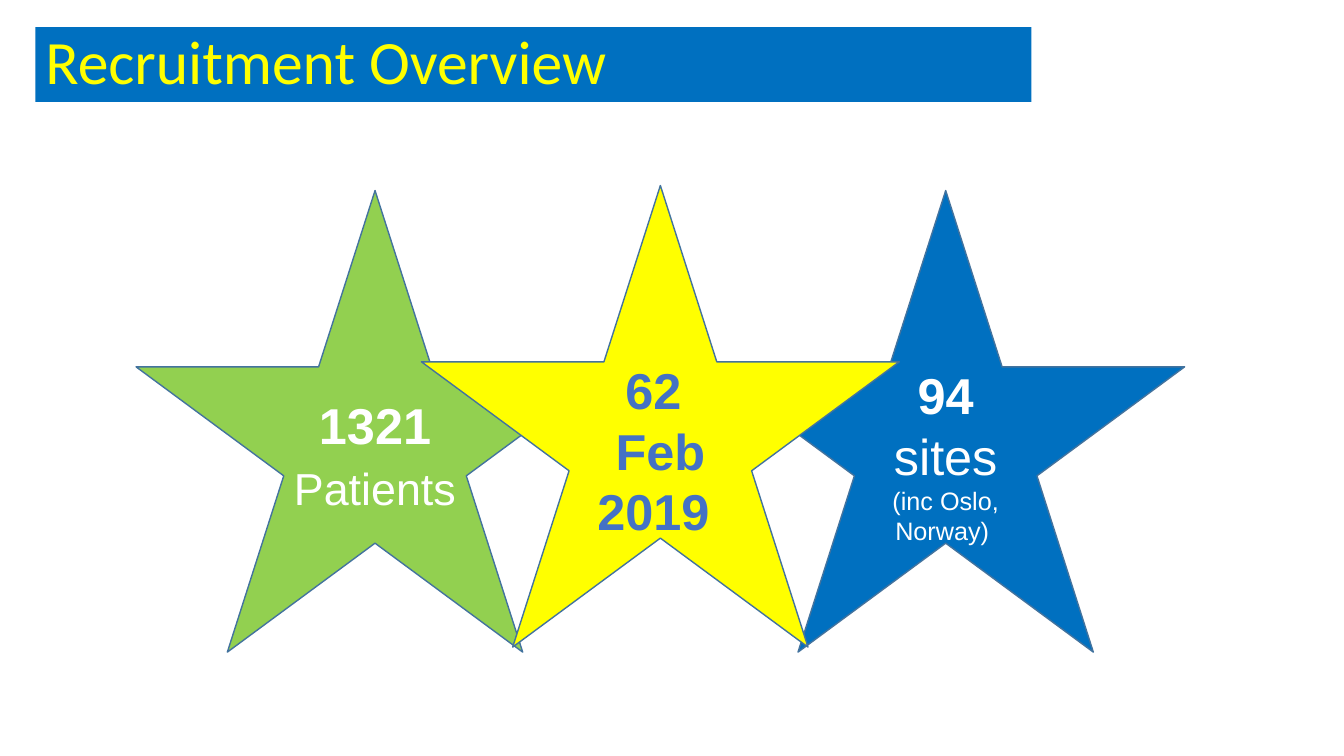
import pptx
import pptx.util
import pptx.dml.color
import pptx.enum.shapes
import pptx.enum.text

Inches, Pt = pptx.util.Inches, pptx.util.Pt
ALIGN = pptx.enum.text.PP_ALIGN
MIDDLE = pptx.enum.text.MSO_ANCHOR.MIDDLE
STAR = pptx.enum.shapes.MSO_SHAPE.STAR_5_POINT
BLUE, GREEN, YELLOW, WHITE = "0070C0", "92D050", "FFFF00", "FFFFFF"
INK, EDGE = "4472C4", "43739E"


def paint(target, color):
    """Give a fill solid colour."""
    target.solid()
    target.fore_color.rgb = pptx.dml.color.RGBColor.from_string(color)


def style(font, name, size, color, bold=False):
    font.name, font.size, font.bold = name, Pt(size), bold
    paint(font.fill, color)


def add_title(slide, text):
    title = slide.shapes.title
    title.left, title.top = Inches(0.35), Inches(0.27)
    title.width, title.height = Inches(9.88), Inches(0.74)
    paint(title.fill, BLUE)
    frame = title.text_frame
    frame.text = text
    frame.vertical_anchor = MIDDLE
    frame.auto_size = pptx.enum.text.MSO_AUTO_SIZE.NONE
    para = frame.paragraphs[0]
    para.alignment, para.line_spacing = ALIGN.LEFT, 0.9
    style(para.font, "Calibri", 44, YELLOW)


def add_star(slide, left, top, fill, color, lines):
    """Draw a star; each line is a list of (text, size, bold) runs."""
    star = slide.shapes.add_shape(
        STAR, Inches(left), Inches(top), Inches(4.74), Inches(4.58))
    star.shadow.inherit = False
    paint(star.fill, fill)
    paint(star.line.fill, EDGE)
    star.line.width = Pt(1)
    frame = star.text_frame
    frame.word_wrap, frame.vertical_anchor = True, MIDDLE
    for i, line in enumerate(lines):
        para = frame.add_paragraph() if i else frame.paragraphs[0]
        para.alignment = ALIGN.CENTER
        for text, size, bold in line:
            run = para.add_run()
            run.text = text
            style(run.font, "Arial", size, color, bold)


def main():
    deck = pptx.Presentation()
    deck.slide_width, deck.slide_height = Inches(13.33), Inches(7.5)
    slide = deck.slides.add_slide(deck.slide_layouts.get_by_name("Title Only"))
    add_title(slide, "Recruitment Overview")
    add_star(slide, 1.35, 1.89, GREEN, WHITE, [
        [("1321", 36, True)],
        [("Patients", 32, False), (" ", 36, False)]])
    add_star(slide, 7.01, 1.89, BLUE, WHITE, [
        [("94", 36, True), (" sites", 36, False)],
        [("(inc Oslo, Norway) ", 18, False)]])
    add_star(slide, 4.18, 1.84, YELLOW, INK, [
        [("62 ", 36, True)],
        [("Feb 2019 ", 36, True)]])
    deck.save("out.pptx")


if __name__ == "__main__":
    main()
